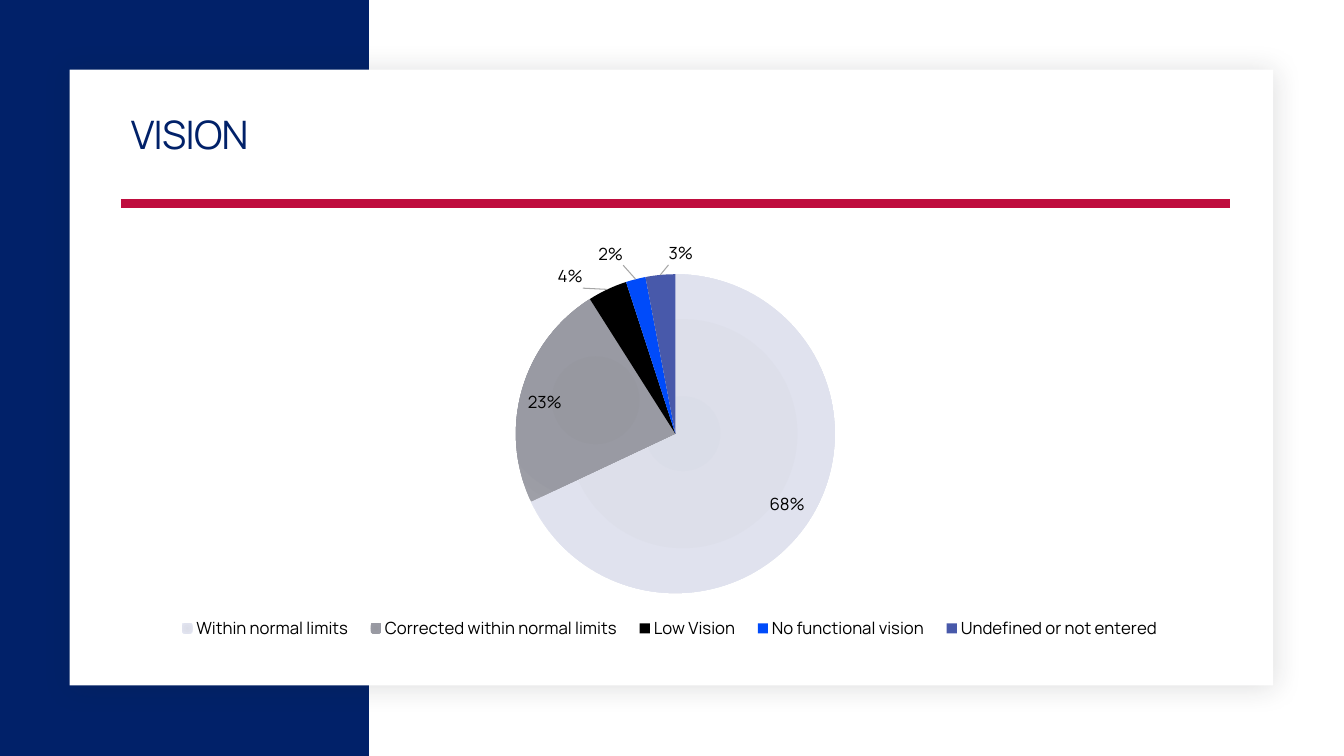
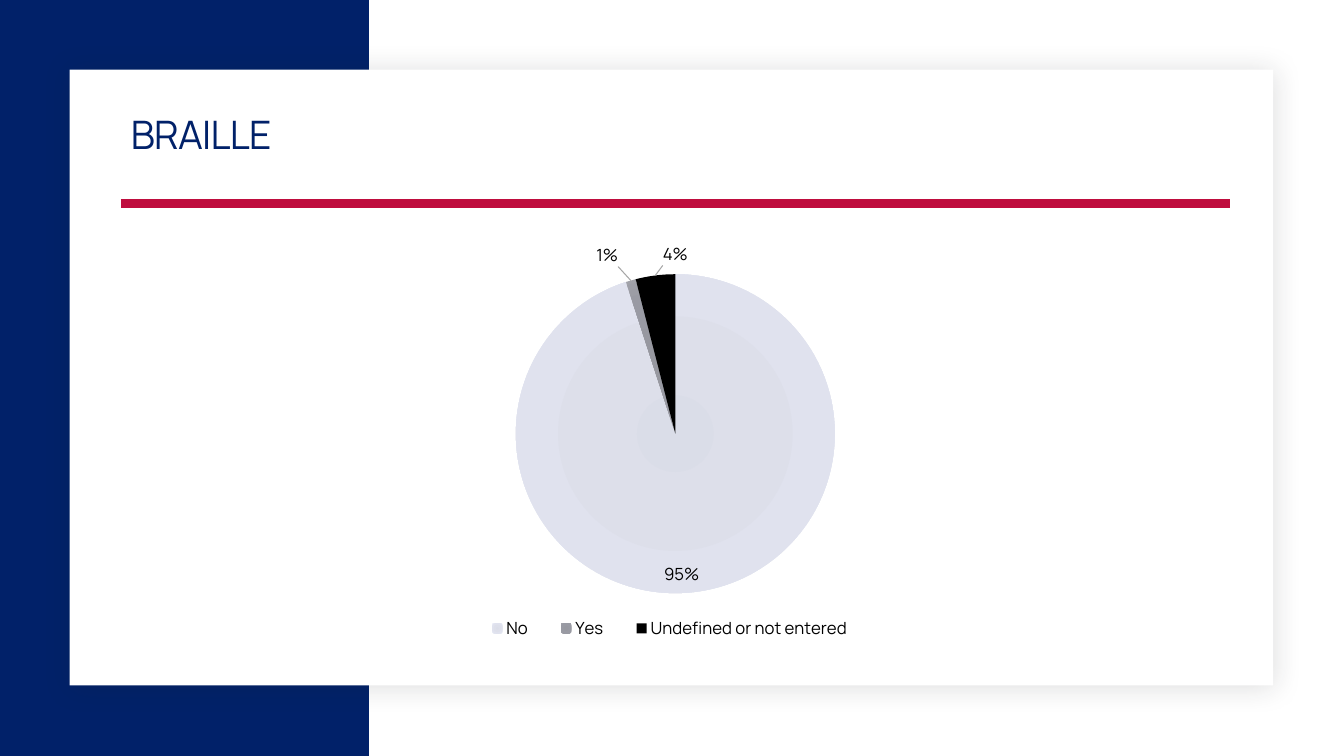
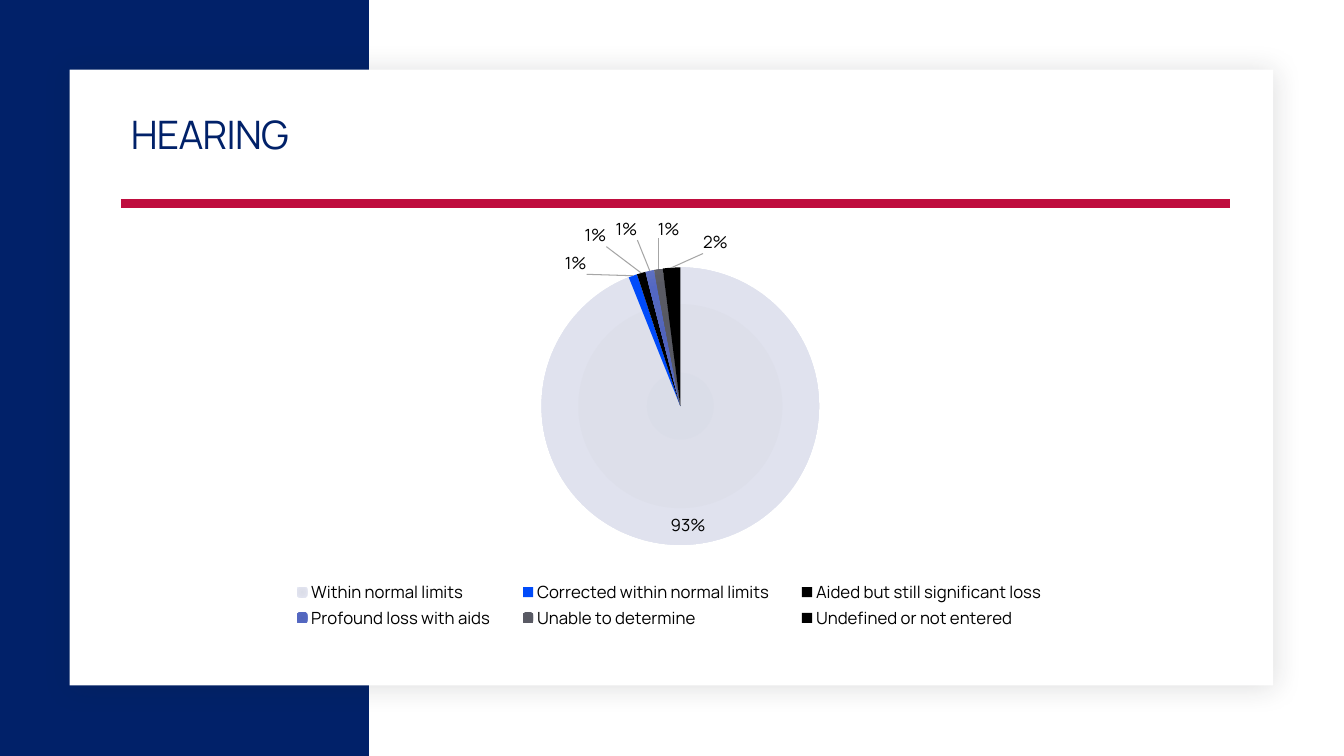
"""Builds three survey slides, each with one pie chart on a shared card."""
from pptx import Presentation
from pptx.chart.data import CategoryChartData
from pptx.dml.color import RGBColor
from pptx.enum.chart import XL_CHART_TYPE, XL_LABEL_POSITION, XL_LEGEND_POSITION
from pptx.enum.shapes import MSO_CONNECTOR, MSO_SHAPE
from pptx.enum.text import MSO_ANCHOR
from pptx.oxml import parse_xml
from pptx.oxml.ns import nsdecls
from pptx.util import Inches, Pt

PIE, BOTTOM = XL_CHART_TYPE.PIE, XL_LEGEND_POSITION.BOTTOM
INSIDE, BEST_FIT = XL_LABEL_POSITION.INSIDE_END, XL_LABEL_POSITION.BEST_FIT
RECT, STRAIGHT, MIDDLE = MSO_SHAPE.RECTANGLE, MSO_CONNECTOR.STRAIGHT, MSO_ANCHOR.MIDDLE

NAVY = RGBColor(0x01, 0x21, 0x69)
RED = RGBColor(0xBF, 0x0D, 0x3E)
WHITE = RGBColor(0xFF, 0xFF, 0xFF)
BLACK = RGBColor(0x00, 0x00, 0x00)
BLUE = RGBColor(0x00, 0x4B, 0xFA)
INDIGO = RGBColor(0x48, 0x59, 0xAA)
LEADER = RGBColor(0xA6, 0xA6, 0xA6)
PALE = ("DADDE8", "DDDFEA", "E0E2EE", "EBEEF8")
GREY = ("95969F", "9798A0", "999AA3", "A1A2A9")
PERIWINKLE = ("5164BD", "5467BD", "5367C2", "6072C2")
SLATE = ("575862", "585962", "595A64", "5E5F68")
STOPS = (0, 34, 70, 100)

FONT = "Manrope"
PERCENT = '0"%"'
HEIGHT = 7.5
WIDTH = HEIGHT * 16 / 9
LEFT, CONTENT_W, CHART_H = 1.2, 11, 4.11
PLOT = (0.35, 0.1, 0.3, 0.77)

# Plot and legend boxes and label shifts are shares of the chart; no shift means inside.
SLIDES = [
    {"title": "VISION", "at": (LEFT, 2.31), "plot": PLOT,
     "legend": (0.04, 0.92, 0.91, 0.07), "slices": [
        ("Within normal limits", 68, PALE, None),
        ("Corrected within normal limits", 23, GREY, None),
        ("Low Vision", 4, BLACK, (-0.02, 0.01)),
        ("No functional vision", 2, BLUE, (-0.01, -0.02)),
        ("Undefined or not entered", 3, INDIGO, (0.03, -0.01))]},
    {"title": "BRAILLE", "at": (LEFT, 2.31), "plot": PLOT,
     "legend": (0.31, 0.92, 0.37, 0.07), "slices": [
        ("No", 95, PALE, None),
        ("Yes", 1, GREY, (-0.01, -0.02)),
        ("Undefined or not entered", 4, BLACK, (0.03, -0.01))]},
    {"title": "HEARING", "at": (1.25, 2.16), "plot": (0.37, 0.12, 0.26, 0.67),
     "legend": (0.13, 0.87, 0.72, 0.13), "slices": [
        ("Within normal limits", 93, PALE, None),
        ("Corrected within normal limits", 1, BLUE, (-0.04, 0.01)),
        ("Aided but still significant loss", 1, BLACK, (-0.03, -0.05)),
        ("Profound loss with aids", 1, PERIWINKLE, (-0.01, -0.06)),
        ("Unable to determine", 1, SLATE, (0.02, -0.06)),
        ("Undefined or not entered", 2, BLACK, (0.04, -0.02))]},
]


def add_block(slide, box, color):
    sp = slide.shapes.add_shape(RECT, *map(Inches, box))
    sp.shadow.inherit = False
    sp.fill.solid()
    sp.fill.fore_color.rgb = color
    sp.line.fill.background()
    return sp


def add_frame(slide, title):
    add_block(slide, (0, 0, 3.66, HEIGHT), NAVY)
    card = add_block(slide, (0.69, 0.69, 11.94, 6.11), WHITE)
    card.element.xpath(".//a:effectLst")[0].append(parse_xml(
        f'<a:outerShdw {nsdecls("a")} blurRad="{Pt(20)}" dist="{Pt(2)}" dir="2700000">'
        '<a:srgbClr val="1F2125"><a:alpha val="15000"/></a:srgbClr></a:outerShdw>'))

    ends = (LEFT, 2.02, LEFT + CONTENT_W, 2.02)
    rule = slide.shapes.add_connector(STRAIGHT, *map(Inches, ends))
    rule.line.color.rgb = RED
    rule.line.width = Pt(6)
    rule.element.spPr.append(parse_xml(f'<a:effectLst {nsdecls("a")}/>'))

    box = (LEFT, 1.04, CONTENT_W, 0.64)
    tf = slide.shapes.add_textbox(*map(Inches, box)).text_frame
    tf.word_wrap = True
    tf.vertical_anchor = MIDDLE
    p = tf.paragraphs[0]
    p.line_spacing = 0.9
    r = p.add_run()
    r.text = title
    r.font.name, r.font.size, r.font.color.rgb = FONT, Pt(28), NAVY
    r.font._element.set("spc", "-50")


def set_font(font, size):
    font.name, font.size, font.color.rgb = FONT, Pt(size), BLACK


def radial_fill(colors):
    stops = "".join(f'<a:gs pos="{pos * 1000}"><a:srgbClr val="{color}"/></a:gs>'
                    for pos, color in zip(STOPS, colors))
    return parse_xml(
        f'<a:gradFill {nsdecls("a")}><a:gsLst>{stops}</a:gsLst><a:path path="circle">'
        '<a:fillToRect l="100000" t="100000" r="100000" b="100000"/></a:path></a:gradFill>')


def manual_layout(**values):
    items = "".join(f'<c:{name} val="{value}"/>' for name, value in values.items())
    return parse_xml(f'<c:layout {nsdecls("c")}><c:manualLayout>{items}'
                     '</c:manualLayout></c:layout>')


def place_part(part, index, box, **target):
    for old in part.xpath("./c:layout"):
        part.remove(old)
    part.insert(index, manual_layout(**target, xMode="edge", yMode="edge",
                                     **dict(zip("xywh", box))))


def add_pie(slide, at, plot, legend, slices):
    data = CategoryChartData()
    data.categories = [name for name, *_ in slices]
    data.add_series("Series 1", [value for _, value, *_ in slices])
    box = (*at, CONTENT_W, CHART_H)
    chart = slide.shapes.add_chart(PIE, *map(Inches, box), data).chart
    chart.has_title = False
    set_font(chart.font, 10)
    chart.has_legend = True
    chart.legend.position = BOTTOM
    chart.legend.include_in_layout = False
    set_font(chart.legend.font, 12)

    root = chart.element
    place_part(root.xpath(".//c:plotArea")[0], 0, plot, layoutTarget="inner")
    place_part(root.xpath(".//c:legend")[0], 1, legend)

    chart.plots[0].vary_by_categories = True
    series = chart.plots[0].series[0]
    labels = series.data_labels
    labels.show_value = True
    labels.number_format, labels.number_format_is_linked = PERCENT, False
    labels.position = INSIDE
    set_font(labels.font, 12)
    root.xpath(".//c:ser/c:dLbls/c:showLeaderLines")[0].addnext(parse_xml(
        f'<c:leaderLines {nsdecls("c", "a")}><c:spPr><a:ln w="{Pt(0.75)}"><a:solidFill>'
        f'<a:srgbClr val="{LEADER}"/></a:solidFill></a:ln></c:spPr></c:leaderLines>'))

    for i, (_, _, color, shift) in enumerate(slices):
        point = series.points[i]
        point.format.line.fill.background()
        fill = point.format.fill
        fill.solid()
        if isinstance(color, RGBColor):
            fill.fore_color.rgb = color
        else:
            solid = root.xpath(f'.//c:dPt[c:idx/@val="{i}"]/c:spPr/a:solidFill')[0]
            solid.getparent().replace(solid, radial_fill(color))
        if shift:
            set_font(point.data_label.font, 12)
            point.data_label.position = BEST_FIT
            label = root.xpath(f'.//c:dLbl[c:idx/@val="{i}"]')[0]
            label.insert(1, manual_layout(x=shift[0], y=shift[1]))
            label.insert(2, parse_xml(f"<c:numFmt {nsdecls('c')} formatCode='{PERCENT}' "
                                      "sourceLinked='0'/>"))


def main():
    prs = Presentation()
    prs.slide_width, prs.slide_height = Inches(WIDTH), Inches(HEIGHT)
    for content in SLIDES:
        slide = prs.slides.add_slide(prs.slide_layouts[6])
        add_frame(slide, content["title"])
        add_pie(slide, content["at"], content["plot"], content["legend"], content["slices"])
    prs.save("out.pptx")


if __name__ == "__main__":
    main()
